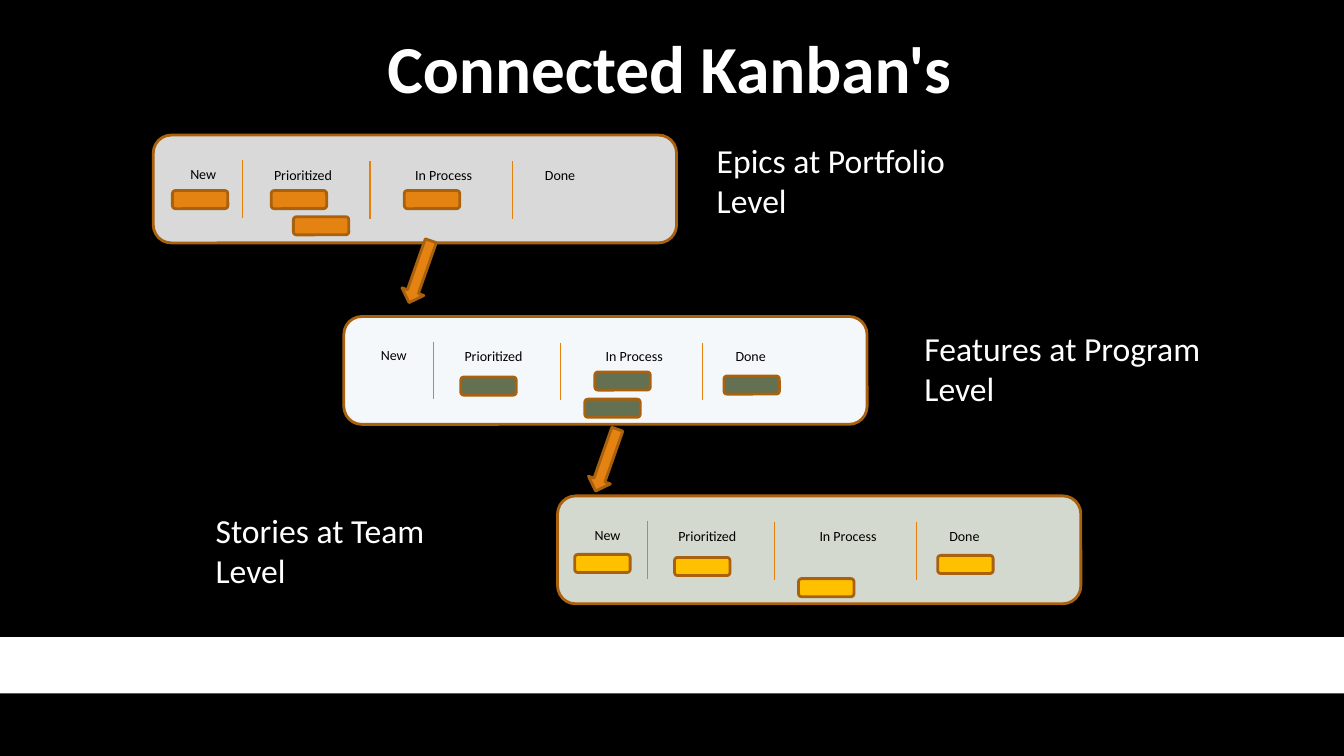
from lxml import etree
from pptx import Presentation, util as u
from pptx.dml.color import RGBColor
from pptx.enum import shapes, text
from pptx.oxml import ns

PX = 9144
FONT = "Calibri"
WHITE, BLACK = "FFFFFF", "000000"
ORANGE, RUST, DIVIDER = "E48312", "A9610D", "E4810C"
PANEL_SIZE = (519, 107)
CARD_SIZE = (55, 18)
ARROW_SIZE = (23, 65)
COLUMNS = [("New", 22, 25, 55), ("Prioritized", 100, 26, 97),
           ("In Process", 244, 26, 88), ("Done", 376, 26, 55)]
DIVIDERS = [(89, 25), (215, 26), (356, 26)]
BOARDS = [
    ((152, 134), "D9D9D9", ORANGE, [(19, 55), (117, 55), (139, 81), (249, 55)]),
    ((341, 314), "F5F8FB", "637052", [(116, 60), (377, 59), (239, 82), (249, 55)]),
    ((553, 492), "D4D9CF", "FFC000", [(116, 61), (377, 59), (239, 82), (17, 58)]),
]
ARROWS = [(405, 237), (590, 424)]
LEVELS = [("Epics at Portfolio Level", (701, 134, 282, 91)),
          ("Features at Program Level", (907, 320, 329, 91)),
          ("Stories at Team Level", (204, 501, 282, 91))]


def emu(*lengths):
    return [u.Emu(length * PX) for length in lengths]


def color(value):
    return RGBColor.from_string(value)


def set_values(target, values):
    for name, value in values.items():
        setattr(target, name, value)


def add_block(page, kind, box, fill, line=None):
    shape = page.shapes.add_shape(kind, *emu(*box))
    shape.shadow.inherit = False
    shape.fill.solid()
    shape.fill.fore_color.rgb = color(fill)
    if line:
        shape.line.color.rgb = color(line)
        shape.line.width = u.Pt(2)
    else:
        shape.line.fill.background()
    return shape


def add_text(page, words, box, size, ink, align=text.PP_ALIGN.CENTER, bold=False, **frame_values):
    frame = page.shapes.add_textbox(*emu(*box)).text_frame
    set_values(frame, {"word_wrap": True, **frame_values})
    para = frame.paragraphs[0]
    para.alignment = align
    span = para.add_run()
    span.text = words
    set_values(span.font, {"name": FONT, "size": u.Pt(size), "bold": bold})
    span.font.color.rgb = color(ink)


def add_divider(page, left, top, height):
    line = page.shapes.add_connector(
        shapes.MSO_CONNECTOR.STRAIGHT, *emu(left, top, left, top + height))
    line.line.color.rgb = color(DIVIDER)
    line.line.width = u.Pt(0.75)
    etree.SubElement(line._element.spPr, ns.qn("a:effectLst"))


def add_board(page, corner, panel_fill, card_fill, cards):
    left, top = corner
    rounded = shapes.MSO_SHAPE.ROUNDED_RECTANGLE
    add_block(page, rounded, (*corner, *PANEL_SIZE), panel_fill, RUST)
    for name, x, y, width in COLUMNS:
        add_text(page, name, (left + x, top + y, width, 27), 10, BLACK)
    for x, y in DIVIDERS:
        add_divider(page, left + x, top + y, 57)
    for x, y in cards:
        add_block(page, rounded, (left + x, top + y, *CARD_SIZE), card_fill, RUST)


def add_arrow(page, corner):
    arrow = add_block(page, shapes.MSO_SHAPE.DOWN_ARROW, (*corner, *ARROW_SIZE), ORANGE, RUST)
    arrow.rotation = 19.4


def add_title(page, box):
    margins = {f"margin_{side}": 0 for side in ("left", "top", "right", "bottom")}
    add_text(page, "Connected Kanban's", box, 48, WHITE, bold=True,
             vertical_anchor=text.MSO_ANCHOR.MIDDLE, **margins)


def build_page(deck):
    page = deck.slides.add_slide(deck.slide_layouts[6])
    page.background.fill.solid()
    page.background.fill.fore_color.rgb = color(BLACK)
    add_block(page, shapes.MSO_SHAPE.RECTANGLE, (0, 632, 1333, 56), WHITE)
    add_title(page, (57, 18, 1214, 96))
    for board in BOARDS:
        add_board(page, *board)
    for corner in ARROWS:
        add_arrow(page, corner)
    for words, box in LEVELS:
        add_text(page, words, box, 24, WHITE, align=text.PP_ALIGN.LEFT)


def main():
    deck = Presentation()
    deck.slide_width, deck.slide_height = emu(1333, 750)
    build_page(deck)
    deck.save("out.pptx")


if __name__ == "__main__":
    main()
